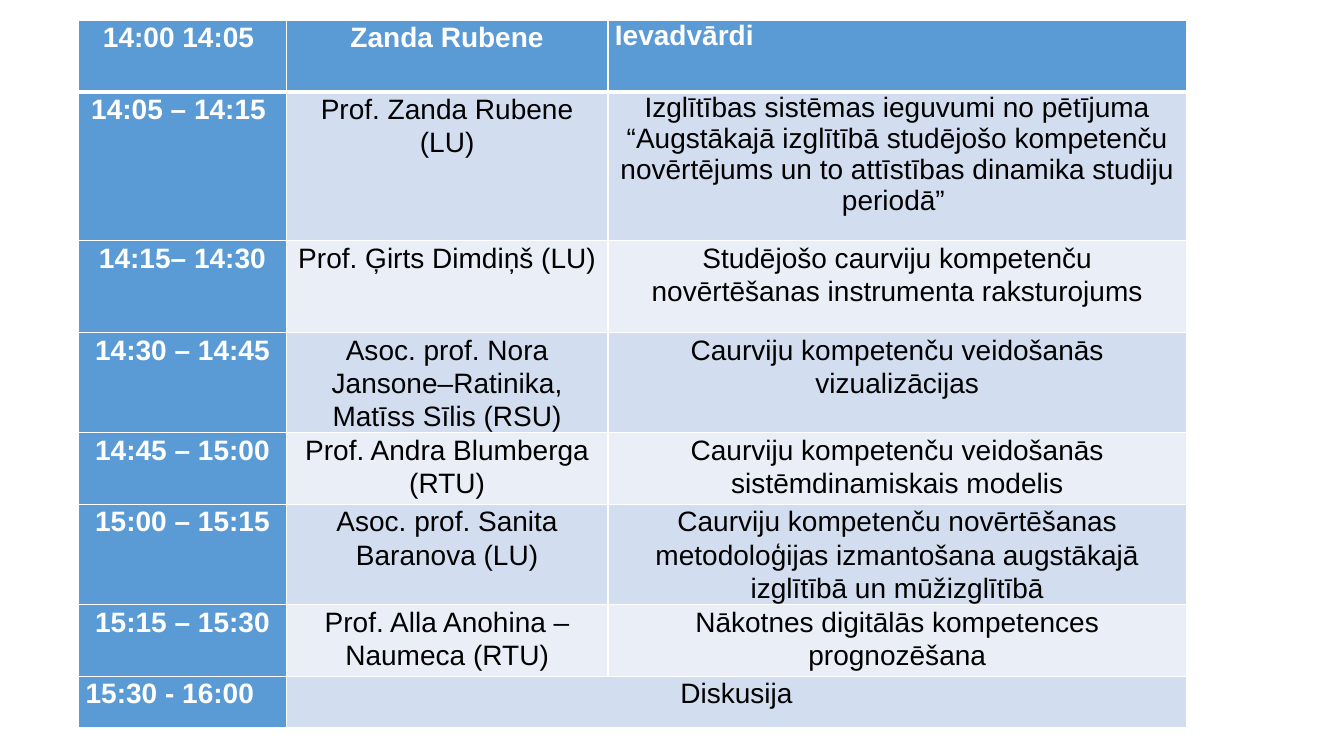
from lxml import etree
from pptx import Presentation
from pptx import util as u
from pptx.dml.color import RGBColor
from pptx.enum import text
from pptx.oxml.ns import qn

COLORS = {"header": "5B9BD5", "odd": "D2DEEF", "even": "EAEFF7",
          "light": "FFFFFF", "dark": "000000"}

AGENDA = [
    ("14:00 14:05 ", "Zanda Rubene", "Ievadvārdi"),
    ("14:05 – 14:15 ", "Prof. Zanda Rubene (LU)",
     "Izglītības sistēmas ieguvumi no pētījuma “Augstākajā izglītībā studējošo "
     "kompetenču novērtējums un to attīstības dinamika studiju periodā” "),
    ("14:15– 14:30", "Prof. Ģirts Dimdiņš (LU)",
     "Studējošo caurviju kompetenču novērtēšanas instrumenta raksturojums"),
    ("14:30 – 14:45", "Asoc. prof. Nora Jansone–Ratinika, Matīss Sīlis (RSU)",
     "Caurviju kompetenču veidošanās vizualizācijas"),
    ("14:45 – 15:00", "Prof. Andra Blumberga (RTU)",
     "Caurviju kompetenču veidošanās sistēmdinamiskais modelis"),
    ("15:00 – 15:15", "Asoc. prof. Sanita Baranova (LU)",
     "Caurviju kompetenču novērtēšanas metodoloģijas izmantošana augstākajā "
     "izglītībā un mūžizglītībā"),
    ("15:15 – 15:30", "Prof. Alla Anohina –Naumeca (RTU)",
     "Nākotnes digitālās kompetences prognozēšana"),
    ("15:30 - 16:00", "Diskusija", ""),
]
COLUMN_WIDTHS = [2.06, 3.19, 5.74]
ROW_HEIGHTS = [0.71, 1.48, 0.91, 0.98, 0.71, 0.98, 0.71, 0.51]
LAST = len(AGENDA) - 1
ALIGN = text.PP_ALIGN
SPECIAL_ALIGN = {(0, 2): ALIGN.JUSTIFY, (LAST, 0): ALIGN.LEFT}
SINGLE_SPACED = {(0, 2), (1, 2)}


def set_borders(cell, widths):
    """Draw light cell borders; widths in points: left, right, top, bottom."""
    properties = cell._tc.get_or_add_tcPr()
    for index, (side, width) in enumerate(zip("LRTB", widths)):
        line = etree.Element(qn(f"a:ln{side}"), w=str(u.Pt(width)))
        fill = etree.SubElement(line, qn("a:solidFill"))
        etree.SubElement(fill, qn("a:srgbClr"), val=COLORS["light"])
        properties.insert(index, line)


prs = Presentation()
prs.slide_width, prs.slide_height = u.Inches(13.33), u.Inches(7.5)
slide = prs.slides.add_slide(prs.slide_layouts[6])

# Agenda grid
agenda = slide.shapes.add_table(
    len(AGENDA), len(COLUMN_WIDTHS), u.Inches(0.78), u.Inches(0.2),
    u.Inches(sum(COLUMN_WIDTHS)), u.Inches(sum(ROW_HEIGHTS))).table
agenda.first_col = True
for column, width in zip(agenda.columns, COLUMN_WIDTHS):
    column.width = u.Inches(width)
for row, height in zip(agenda.rows, ROW_HEIGHTS):
    row.height = u.Inches(height)

# The discussion spans speaker and topic
agenda.cell(LAST, 1).merge(agenda.cell(LAST, 2))

# Cell contents and formatting
for r, entry in enumerate(AGENDA):
    for c, wording in enumerate(entry):
        cell = agenda.cell(r, c)
        is_header = r == 0 or c == 0
        band = "header" if is_header else "odd" if r % 2 else "even"
        cell.fill.solid()
        cell.fill.fore_color.rgb = RGBColor.from_string(COLORS[band])
        set_borders(cell, (1, 1, 3 if r == 1 else 1, 3 if r == 0 else 1))
        cell.margin_left = cell.margin_right = u.Inches(0.07)
        cell.margin_top = cell.margin_bottom = 0
        if cell.is_spanned:
            continue

        cell.text_frame.text = wording
        paragraph = cell.text_frame.paragraphs[0]
        paragraph.alignment = SPECIAL_ALIGN.get((r, c), ALIGN.CENTER)
        paragraph.line_spacing = 1.0 if (r, c) in SINGLE_SPACED else 1.07
        font = paragraph.runs[0].font
        font.name, font.size, font.bold = "Arial", u.Pt(20), is_header
        font.color.rgb = RGBColor.from_string(COLORS["light" if is_header else "dark"])

prs.save("out.pptx")
